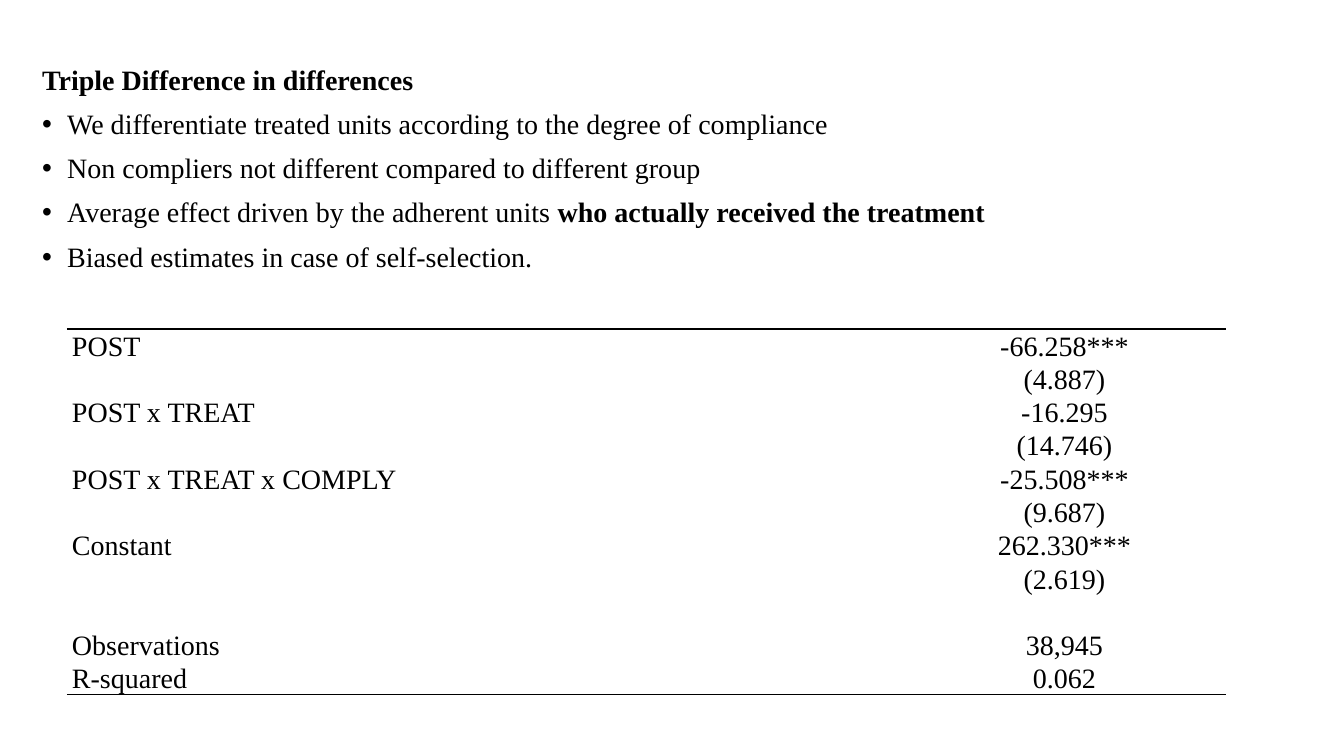
from dataclasses import dataclass

from pptx import Presentation
from pptx.dml.color import RGBColor
from pptx.enum.text import MSO_ANCHOR, PP_ALIGN
from pptx.oxml import parse_xml
from pptx.oxml.ns import nsdecls, qn
from pptx.util import Pt

PX = 914400 / 100.8


@dataclass(frozen=True)
class Theme:
    """Hold the colours and type sizes of the slide."""
    ink: str = "000000"
    paper: str = "FFFFFF"
    font: str = "Times New Roman"
    text_size: int = 20
    gap_size: int = 12
    rule_width: int = 1


THEME = Theme()
HEADING = "Triple Difference in differences"
BULLETS = [
    [("We differentiate treated units according to the degree of compliance", False)],
    [("Non compliers not different compared to different group", False)],
    [("Average effect driven by the adherent units ", False),
     ("who actually received the treatment", True)],
    [("Biased estimates in case of self-selection.", False)],
]
RESULTS = [
    ("POST", "-66.258***"),
    ("", "(4.887)"),
    ("POST x TREAT", "-16.295"),
    ("", "(14.746)"),
    ("POST x TREAT x COMPLY", "-25.508***"),
    ("", "(9.687)"),
    ("Constant", "262.330***"),
    ("", "(2.619)"),
    ("", ""),
    ("Observations", "38,945"),
    ("R-squared", "0.062"),
    ("", ""),
]


def px(length):
    """Turn a length in px into EMU."""
    return round(length * PX)


def write_text(paragraph, runs, align=PP_ALIGN.LEFT, line=1.0, before=0, after=0):
    """Write (text, bold) runs into a paragraph and format it."""
    paragraph.alignment = align
    paragraph.line_spacing = line
    paragraph.space_before = Pt(before)
    paragraph.space_after = Pt(after)
    for text, bold in runs:
        run = paragraph.add_run()
        run.text = text
        run.font.name = THEME.font
        run.font.size = Pt(THEME.text_size)
        run.font.bold = bold
        run.font.color.rgb = RGBColor.from_string(THEME.ink)


def set_bullet(paragraph, indent):
    """Give a paragraph a hanging bullet, or none when the indent is zero."""
    properties = paragraph._p.get_or_add_pPr()
    properties.set("marL", str(px(indent)))
    properties.set("indent", str(-px(indent)))
    namespace = nsdecls("a")
    if indent:
        properties.append(parse_xml(f'<a:buFont {namespace} typeface="Arial"/>'))
        properties.append(parse_xml(f'<a:buChar {namespace} char="•"/>'))
    else:
        properties.append(parse_xml(f"<a:buNone {namespace}/>"))


def add_findings(slide, left, top, width, height):
    """Fill the body placeholder with the heading and its bullets."""
    body = slide.placeholders[1]
    body.left, body.top, body.width, body.height = map(px, (left, top, width, height))
    frame = body.text_frame
    frame.word_wrap = True
    frame.vertical_anchor = MSO_ANCHOR.TOP
    for index, runs in enumerate([[(HEADING, True)], *BULLETS]):
        paragraph = frame.add_paragraph() if index else frame.paragraphs[0]
        write_text(paragraph, runs, line=0.9, before=10)
        set_bullet(paragraph, 25 if index else 0)


def draw_rule(cell, edge):
    """Draw a rule on one edge of a cell: lnT for top, lnB for bottom."""
    cell._tc.get_or_add_tcPr().insert(0, parse_xml(
        f'<a:{edge} {nsdecls("a")} w="{Pt(THEME.rule_width)}"><a:solidFill>'
        f'<a:srgbClr val="{THEME.ink}"/></a:solidFill></a:{edge}>'))


def fill_cell(cell, text, align):
    """Write one table cell without a fill."""
    cell.fill.background()
    cell.vertical_anchor = MSO_ANCHOR.BOTTOM
    cell.margin_left = cell.margin_right = px(5)
    cell.margin_top = cell.margin_bottom = 0
    paragraph = cell.text_frame.paragraphs[0]
    if text:
        write_text(paragraph, [(text, False)], align=align, line=1.07, after=8)
    else:
        paragraph.font.size = Pt(THEME.gap_size)


def add_results(slide, left, top, width, height):
    """Place the regression table, ruled above and below its results."""
    last = len(RESULTS) - 1
    row_height = 33
    frame = slide.shapes.add_table(len(RESULTS), 2, *map(px, (left, top, width, height)))
    table = frame.table
    table.first_row = table.horz_banding = False
    style = table._tbl.tblPr.find(qn("a:tableStyleId"))
    style.text = "{2D5ABB26-0587-4C30-8999-92F81FD0307C}"
    value_width = 323
    table.columns[0].width = px(width - value_width)
    table.columns[1].width = px(value_width)
    edges = {0: "lnT", last - 1: "lnB", last: "lnT"}
    for index, texts in enumerate(RESULTS):
        table.rows[index].height = px(row_height if index < last else height - last * row_height)
        for column, align in enumerate((PP_ALIGN.LEFT, PP_ALIGN.CENTER)):
            cell = table.cell(index, column)
            fill_cell(cell, texts[column], align)
            if index in edges:
                draw_rule(cell, edges[index])
    table.cell(last, 0).merge(table.cell(last, 1))


def main():
    """Build the slide and save it."""
    presentation = Presentation()
    presentation.slide_width, presentation.slide_height = px(1344), px(756)
    slide = presentation.slides.add_slide(presentation.slide_layouts[1])
    title = slide.shapes.title
    title._element.getparent().remove(title._element)
    slide.background.fill.solid()
    slide.background.fill.fore_color.rgb = RGBColor.from_string(THEME.paper)
    add_findings(slide, 32, 61, 1334, 654)
    add_results(slide, 67, 329, 1159, 413)
    presentation.save("out.pptx")


if __name__ == "__main__":
    main()
